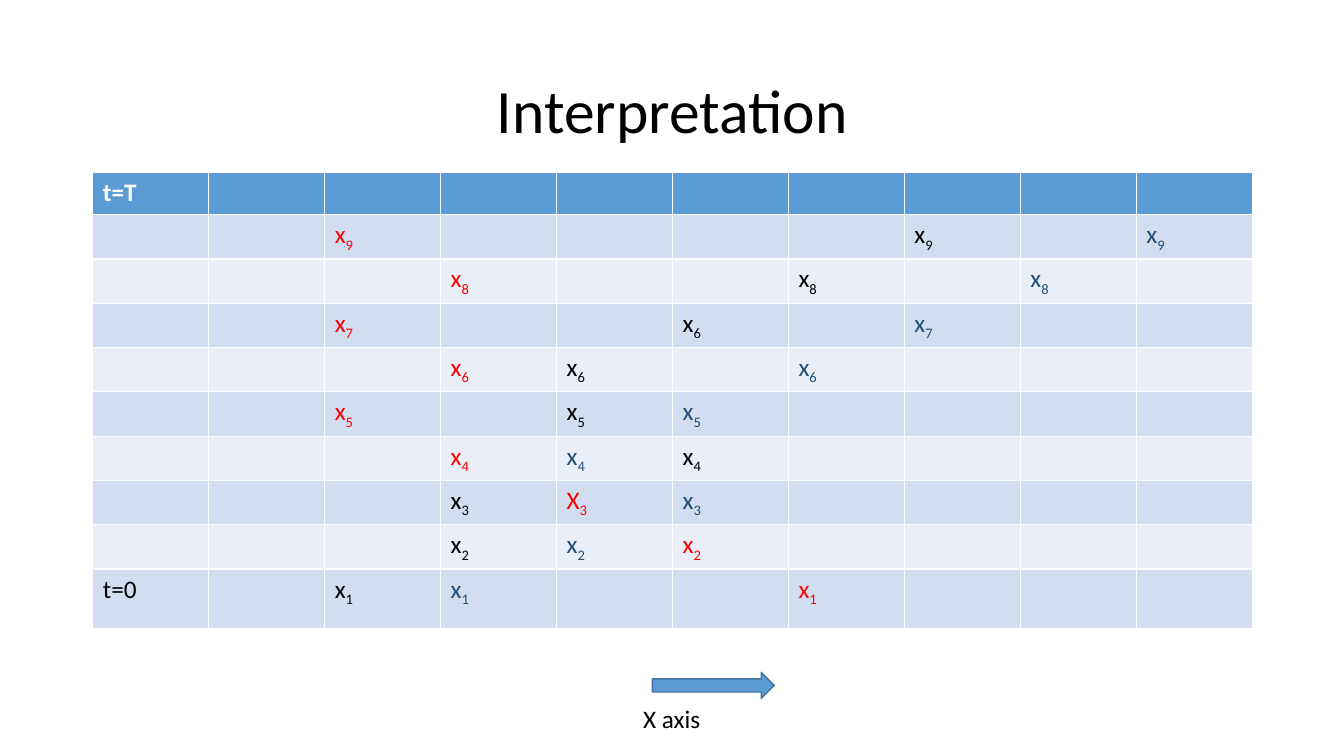
from pptx import Presentation
from pptx import util as u
from pptx.dml.color import RGBColor
from pptx.enum import shapes, text

WIDTH, HEIGHT = u.Inches(13.33), u.Inches(7.5)
FONT = "Calibri"
BLACK = RGBColor(0x00, 0x00, 0x00)
WHITE = RGBColor(0xFF, 0xFF, 0xFF)
RED = RGBColor(0xFF, 0x00, 0x00)
NAVY = RGBColor(0x1F, 0x4E, 0x79)
BLUE = RGBColor(0x5B, 0x9B, 0xD5)
OUTLINE = RGBColor(0x43, 0x73, 0x9E)
BANDS = (RGBColor(0xEA, 0xEF, 0xF7), RGBColor(0xD2, 0xDE, 0xEF))

STEPS = 9
COLUMNS = 10
COLUMN = u.Inches(1.15)
ROW = u.Inches(0.42)
LAST_ROW = u.Inches(0.59)
LEFT = u.Inches(0.92)

TRAJECTORIES = (
    (RED, (6, 5, 4, 3, 2, 3, 2, 3, 2)),
    (BLACK, (2, 3, 3, 5, 4, 4, 5, 6, 7)),
    (NAVY, (3, 4, 5, 4, 5, 6, 7, 8, 9)),
)
SPECIAL_LABELS = {(RED, 3): ("X", "3"), (BLACK, 7): ("x", "6")}


def style(p, color, size=18):
    """Set the font of a whole paragraph."""
    p.font.name = FONT
    p.font.size = u.Pt(size)
    p.font.color.rgb = color


def add_title(s, words):
    """Place and format the title placeholder."""
    sp = s.shapes.title
    sp.left, sp.top = LEFT, u.Inches(0.4)
    sp.width, sp.height = COLUMN * COLUMNS, u.Inches(1.45)
    tf = sp.text_frame
    tf.text = words
    tf.vertical_anchor = text.MSO_ANCHOR.MIDDLE
    p = tf.paragraphs[0]
    p.alignment = text.PP_ALIGN.CENTER
    p.line_spacing = 0.9
    style(p, BLACK, 44)


def add_grid(s):
    """Add the banded time grid and return its table."""
    rows = STEPS + 1
    table = s.shapes.add_table(rows, COLUMNS, LEFT, u.Inches(1.71),
                               COLUMN * COLUMNS, ROW * STEPS + LAST_ROW).table
    for column in table.columns:
        column.width = COLUMN
    for i, row in enumerate(table.rows):
        row.height = LAST_ROW if i == STEPS else ROW
        for cell in row.cells:
            cell.fill.solid()
            cell.fill.fore_color.rgb = BANDS[i % 2] if i else BLUE
    return table


def write_time(table, row, words, color):
    """Write a time label in the first column."""
    p = table.cell(row, 0).text_frame.paragraphs[0]
    p.text = words
    style(p, color)
    p.font.bold = row == 0


def write_state(table, step, column, color):
    """Write a subscripted state, counting steps from the bottom row."""
    p = table.cell(STEPS + 1 - step, column).text_frame.paragraphs[0]
    style(p, color)
    letter, index = SPECIAL_LABELS.get((color, step), ("x", str(step)))
    for words in (letter, index):
        r = p.add_run()
        r.text = words
        r.font.size = u.Pt(18)
        r.font.name = FONT
        r.font.color.rgb = color
    r.font._element.set("baseline", "-25000")


def add_axis(s, words):
    """Add the axis arrow and its caption."""
    sp = s.shapes.add_shape(shapes.MSO_SHAPE.RIGHT_ARROW, u.Inches(6.47),
                            u.Inches(6.67), u.Inches(1.21), u.Inches(0.26))
    sp.shadow.inherit = False
    sp.fill.solid()
    sp.fill.fore_color.rgb = BLUE
    sp.line.color.rgb = OUTLINE
    sp.line.width = u.Pt(1)
    tf = s.shapes.add_textbox(u.Inches(6.28), u.Inches(6.93),
                              u.Inches(0.83), u.Inches(0.4)).text_frame
    tf.word_wrap = False
    tf.auto_size = text.MSO_AUTO_SIZE.SHAPE_TO_FIT_TEXT
    tf.text = words
    style(tf.paragraphs[0], BLACK)


def main():
    """Build the slide and save it."""
    prs = Presentation()
    prs.slide_width, prs.slide_height = WIDTH, HEIGHT
    s = prs.slides.add_slide(prs.slide_layouts[5])
    add_title(s, "Interpretation")
    table = add_grid(s)
    write_time(table, 0, "t=T", WHITE)
    write_time(table, STEPS, "t=0", BLACK)
    for color, columns in TRAJECTORIES:
        for step, column in enumerate(columns, 1):
            write_state(table, step, column, color)
    add_axis(s, "X axis")
    prs.save("out.pptx")


if __name__ == "__main__":
    main()
